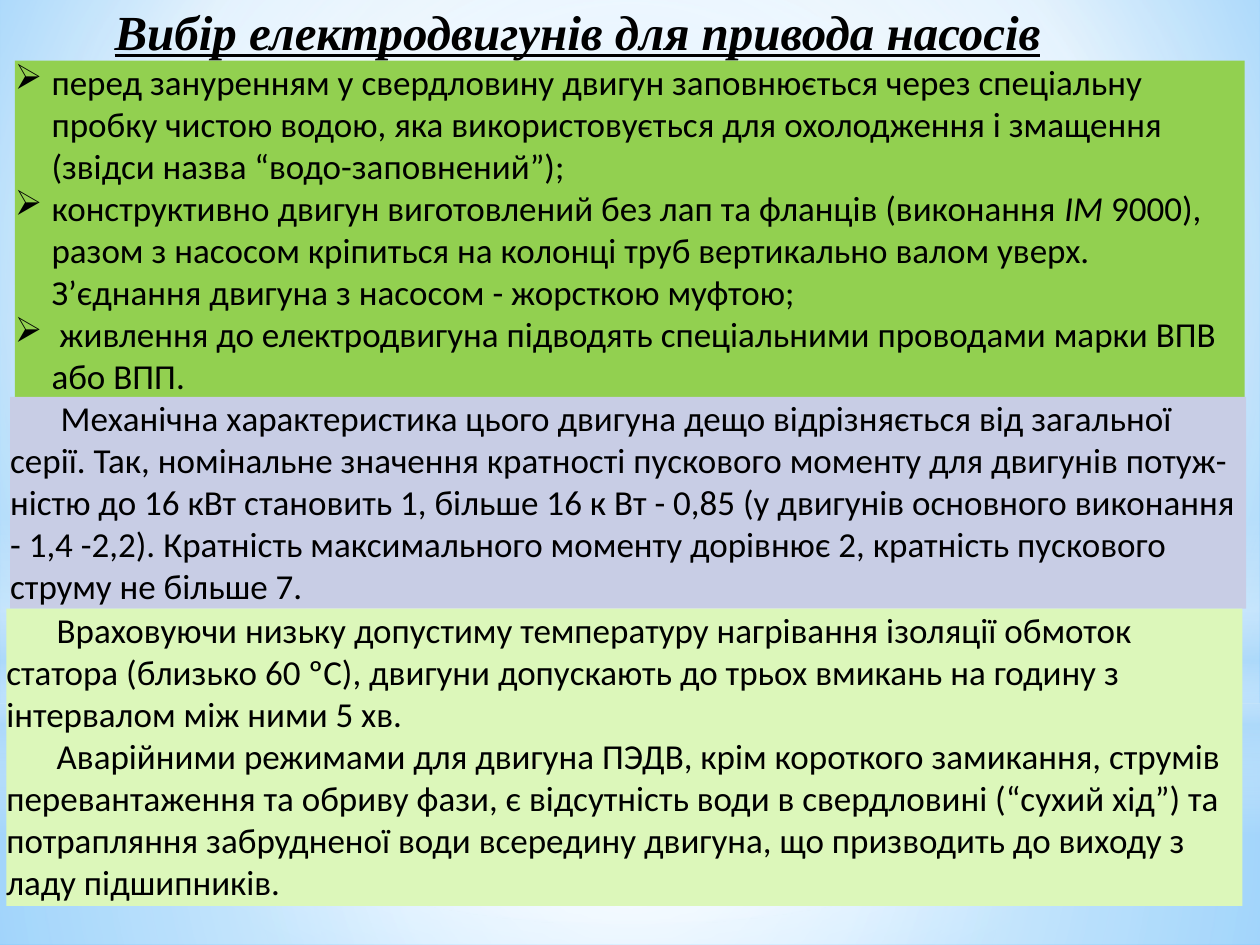
from dataclasses import dataclass

import lxml.etree
import pptx
import pptx.dml.color
import pptx.enum.shapes
import pptx.enum.text
import pptx.oxml.ns
import pptx.util

Pt = pptx.util.Pt
qn = pptx.oxml.ns.qn
Shapes = pptx.enum.shapes.MSO_SHAPE
Box = tuple[float, float, float, float]
CENTER = (50, 50, 50, 50)
BULLET_INDENT = 20.9
FIRST_LINE_INDENT = 28.8


@dataclass
class Stop:
    position: int
    color: str
    opacity: int = 100


@dataclass
class Glow:
    box: Box
    stops: list[Stop]
    focus: tuple[int, int, int, int] | None = CENTER
    kind: Shapes = Shapes.RECTANGLE


@dataclass
class Span:
    text: str
    italic: bool = False


@dataclass
class Panel:
    box: Box
    color: str
    paragraphs: list[list[Span]]
    bulleted: bool = False


BACKGROUND = [Stop(0, "9ED5FF"), Stop(60, "FFFFFF"), Stop(100, "5BB9FF")]

GLOWS = [
    Glow((0, 401.8, 720, 138.2),
         [Stop(0, "FFFFFF", 91), Stop(37, "FFFFFF", 76), Stop(100, "B4DCFA", 79)]),
    Glow((0, 0, 720, 401.8),
         [Stop(0, "FFFFFF", 89), Stop(48, "FFFFFF", 62), Stop(100, "B4DCFA", 79)]),
    Glow((0, 296.6, 720, 180),
         [Stop(0, "FFFFFF", 0), Stop(29, "FFFFFF", 30), Stop(45, "B4DCFA", 40),
          Stop(55, "FFFFFF", 26), Stop(65, "B4DCFA", 60), Stop(100, "FFFFFF", 0)],
         focus=None),
    Glow((0, 126, 720, 401.8), [Stop(0, "FFFFFF"), Stop(56, "FFFFFF", 0)],
         kind=Shapes.OVAL),
]

PANELS = [
    Panel((8.6, 34.6, 702.7, 193.7), "92D050", [
        [Span("перед зануренням у свердловину двигун заповнюється через спеціальну "
              "пробку чистою водою, яка використовується для охолодження і змащення "
              "(звідси назва “водо-заповнений”);")],
        [Span("конструктивно двигун виготовлений без лап та фланців (виконання "),
         Span("ІМ", italic=True),
         Span(" 9000), разом з насосом кріпиться на колонці труб вертикально валом "
              "уверх. З’єднання двигуна з насосом - жорсткою муфтою;")],
        [Span(" живлення до електродвигуна підводять спеціальними проводами марки "
              "ВПВ або ВПП.")],
    ], bulleted=True),
    Panel((5.8, 226.8, 706.3, 121), "C8CDE5", [
        [Span("Механічна характеристика цього двигуна дещо відрізняється від загальної "
              "серії. Так, номінальне значення кратності пускового моменту для двигунів "
              "потуж-ністю до 16 кВт становить 1, більше 16 к Вт - 0,85 (у двигунів "
              "основного виконання - 1,4 -2,2). Кратність максимального моменту "
              "дорівнює 2, кратність пускового струму не більше 7.")],
    ]),
    Panel((3.6, 347.8, 706.3, 169.9), "DCF7BA", [
        [Span("Враховуючи низьку допустиму температуру нагрівання ізоляції обмоток "
              "статора (близько 60 ºС), двигуни допускають до трьох вмикань на годину "
              "з інтервалом між ними 5 хв.")],
        [Span("Аварійними режимами для двигуна ПЭДВ, крім короткого замикання, струмів "
              "перевантаження та обриву фази, є відсутність води в свердловині (“сухий "
              "хід”) та потрапляння забрудненої води всередину двигуна, що призводить "
              "до виходу з ладу підшипників.")],
    ]),
]


def rgb(color: str) -> pptx.dml.color.RGBColor:
    return pptx.dml.color.RGBColor.from_string(color)


def set_gradient(owner, stops: list[Stop], focus) -> None:
    """Fill owner with stops, radially around focus or downwards without one."""
    owner.fill.gradient()
    gradient = next(owner_element(owner).iter(qn("a:gradFill")))
    for child in list(gradient):
        gradient.remove(child)

    def add(parent, tag: str, **attributes):
        return lxml.etree.SubElement(
            parent, qn(tag), {name: str(value) for name, value in attributes.items()})

    stop_list = add(gradient, "a:gsLst")
    for stop in stops:
        item = add(stop_list, "a:gs", pos=stop.position * 1000)
        color = add(item, "a:srgbClr", val=stop.color)
        if stop.opacity < 100:
            add(color, "a:alpha", val=stop.opacity * 1000)
    if focus is None:
        add(gradient, "a:lin", ang=90 * 60000, scaled=0)
    else:
        circle = add(gradient, "a:path", path="circle")
        add(circle, "a:fillToRect",
            **{side: value * 1000 for side, value in zip("ltrb", focus)})


def owner_element(owner):
    """Return the XML of a shape, or of the whole slide for its background."""
    return owner.element if hasattr(owner, "element") else owner._cSld


def add_plain_shape(slide, kind: Shapes, box: Box):
    shape = slide.shapes.add_shape(kind, *map(Pt, box))
    shape.shadow.inherit = False
    shape.line.fill.background()
    return shape


def prepare_frame(shape, wrap: bool):
    frame = shape.text_frame
    frame.margin_left = frame.margin_top = frame.margin_right = frame.margin_bottom = 0
    frame.vertical_anchor = pptx.enum.text.MSO_ANCHOR.TOP
    frame.auto_size = pptx.enum.text.MSO_AUTO_SIZE.SHAPE_TO_FIT_TEXT
    frame.word_wrap = wrap
    return frame


def add_run(paragraph, text: str, size: float, font: str, italic: bool):
    run = paragraph.add_run()
    run.text = text
    run.font.size = Pt(size)
    run.font.name = font
    run.font.italic = italic
    run.font.color.rgb = rgb("000000")
    return run


def indent(paragraph, bulleted: bool) -> None:
    properties = paragraph._p.get_or_add_pPr()
    left, first = (BULLET_INDENT, -BULLET_INDENT) if bulleted else (0, FIRST_LINE_INDENT)
    properties.set("marL", str(int(Pt(left))))
    properties.set("indent", str(int(Pt(first))))
    if bulleted:
        lxml.etree.SubElement(properties, qn("a:buChar"), {"char": "➢"})


def add_panel(slide, panel: Panel) -> None:
    shape = add_plain_shape(slide, Shapes.RECTANGLE, panel.box)
    shape.fill.solid()
    shape.fill.fore_color.rgb = rgb(panel.color)
    frame = prepare_frame(shape, wrap=True)
    for number, spans in enumerate(panel.paragraphs):
        paragraph = frame.add_paragraph() if number else frame.paragraphs[0]
        paragraph.alignment = pptx.enum.text.PP_ALIGN.LEFT
        indent(paragraph, panel.bulleted)
        for span in spans:
            add_run(paragraph, span.text, 20, "Calibri", span.italic)


def format_title(title) -> None:
    title.left, title.top, title.width, title.height = map(Pt, (65.5, 0.7, 535, 33.8))
    paragraph = prepare_frame(title, wrap=False).paragraphs[0]
    paragraph.alignment = pptx.enum.text.PP_ALIGN.LEFT
    run = add_run(paragraph, "Вибір електродвигунів для привода насосів",
                  28, "Times New Roman", italic=True)
    run.font.bold = True
    run.font.underline = True
    title.element.getparent().append(title.element)  # bring above the glows


def main() -> None:
    presentation = pptx.Presentation()
    presentation.slide_width, presentation.slide_height = Pt(720), Pt(540)
    slide = presentation.slides.add_slide(presentation.slide_layouts[5])
    set_gradient(slide.background, BACKGROUND, (20, 10, 20, 60))
    for glow in GLOWS:
        set_gradient(add_plain_shape(slide, glow.kind, glow.box), glow.stops, glow.focus)
    format_title(slide.shapes.title)
    for panel in PANELS:
        add_panel(slide, panel)
    presentation.save("out.pptx")


if __name__ == "__main__":
    main()
